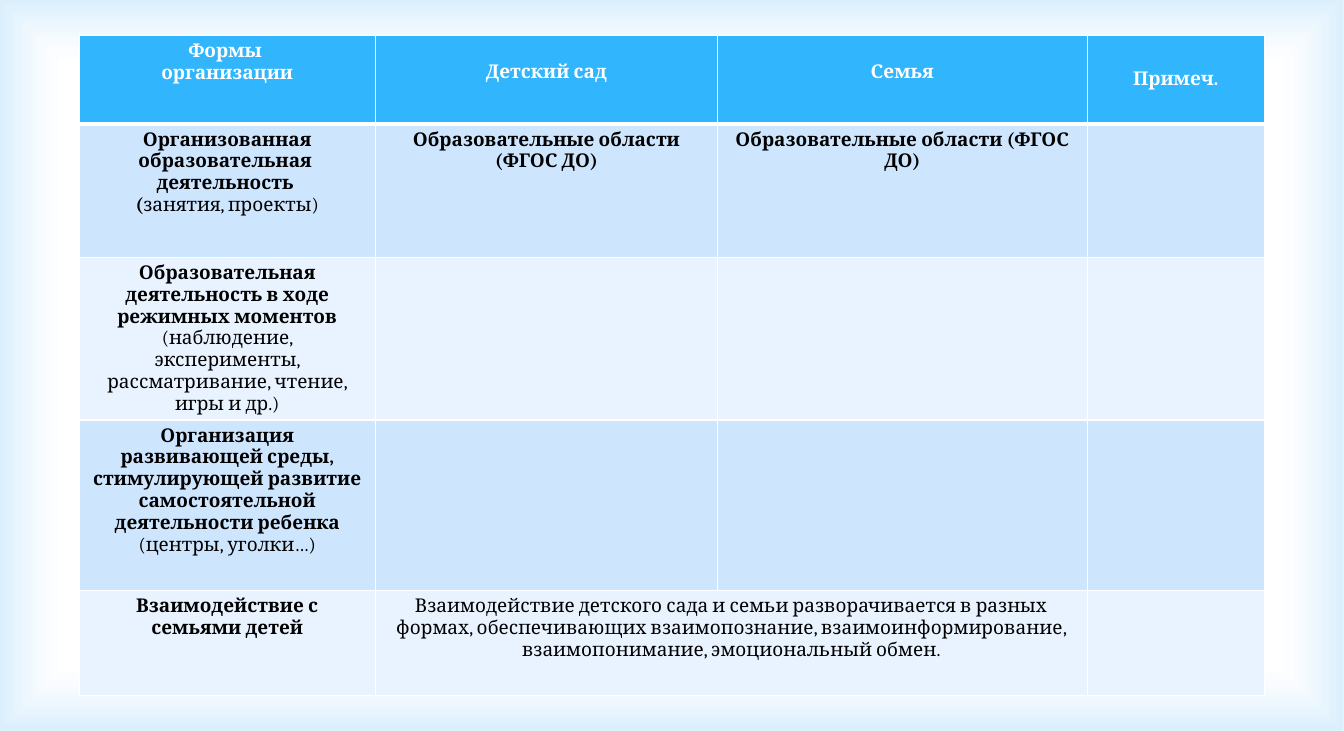
"""Build a slide with a table of forms of work in kindergarten and family."""
from lxml import etree
from pptx import Presentation, util as u
from pptx.dml.color import RGBColor
from pptx.enum import shapes, text
from pptx.oxml import parse_xml

NS = "http://schemas.openxmlformats.org/drawingml/2006/main"
WHITE, BLACK, HEADER = "FFFFFF", "000000", "31B6FD"
BANDS = ["CEE5FE", "E8F3FF"]


def add_text(p, content, color=BLACK, bold=False, size=14, font="Cambria"):
    p.alignment = text.PP_ALIGN.CENTER
    r = p.add_run()
    r.text = content
    r.font.name, r.font.size, r.font.bold = font, u.Pt(size), bold
    r.font.color.rgb = RGBColor.from_string(color)


def add_border(cell, index, side, width):
    ln = etree.Element(f"{{{NS}}}ln{side}", w=str(u.Pt(width)))
    fill = etree.SubElement(ln, f"{{{NS}}}solidFill")
    etree.SubElement(fill, f"{{{NS}}}srgbClr", val=WHITE)
    cell._tc.get_or_add_tcPr().insert(index, ln)


prs = Presentation()
prs.slide_width, prs.slide_height = u.Cm(35.01), u.Cm(19.05)
s = prs.slides.add_slide(prs.slide_layouts[6])

sp = s.shapes.add_shape(shapes.MSO_SHAPE.RECTANGLE, 0, 0, prs.slide_width, prs.slide_height)
sp.shadow.inherit = False
sp.line.fill.background()
sp.fill.background()
spPr = sp._element.spPr
spPr.replace(spPr.find(f"{{{NS}}}noFill"), parse_xml(
    f'<a:gradFill xmlns:a="{NS}" rotWithShape="1"><a:gsLst>'
    '<a:gs pos="83000"><a:srgbClr val="FFFFFF"><a:alpha val="11000"/></a:srgbClr></a:gs>'
    '<a:gs pos="100000"><a:srgbClr val="5BBAF6"><a:alpha val="23000"/></a:srgbClr></a:gs>'
    '</a:gsLst><a:path path="rect"><a:fillToRect l="50000" t="50000" r="50000" b="50000"/>'
    '</a:path></a:gradFill>'))

widths = [7.72, 8.91, 9.63, 4.61]
heights = [2.31, 3.48, 3.86, 4.45, 2.72]
areas = [[("Образовательные области (ФГОС ДО)", True)]]
rows = [
    [[[("Формы ", True)], [("организации", True)]],
     [[("Детский сад", True)]], [[("Семья", True)]], [[("Примеч.", True)]]],
    [[[("Организованная образовательная ", True)], [("деятельность ", True)],
      [("(", True), ("занятия, проекты)", False)]], areas, areas, []],
    [[[("Образовательная деятельность в ходе режимных моментов", True)],
      [("(наблюдение, эксперименты, рассматривание, чтение, игры и др.)", False)]], [], [], []],
    [[[("Организация развивающей среды,", True)],
      [("стимулирующей развитие самостоятельной деятельности ребенка", True)],
      [("(центры, уголки…)", False)]], [], [], []],
    [[[("Взаимодействие с семьями детей", True)]],
     [[("Взаимодействие детского сада и семьи разворачивается в разных формах, "
        "обеспечивающих взаимопознание, взаимоинформирование, взаимопонимание, "
        "эмоциональный обмен.", False)]], [], []],
]

table = s.shapes.add_table(len(rows), len(widths), u.Cm(2.06), u.Cm(0.92),
                           u.Cm(sum(widths)), u.Cm(sum(heights))).table
table.horz_banding = False
for column, width in zip(table.columns, widths):
    column.width = u.Cm(width)

for i, (row, height) in enumerate(zip(rows, heights)):
    table.rows[i].height = u.Cm(height)
    for j, paragraphs in enumerate(row):
        cell = table.cell(i, j)
        cell.margin_left = cell.margin_right = u.Cm(0.36)
        cell.margin_top = cell.margin_bottom = u.Cm(0.13)
        cell.fill.solid()
        cell.fill.fore_color.rgb = RGBColor.from_string(BANDS[(i - 1) % 2] if i else HEADER)
        sides = {"L": 1, "R": 1, "T": 3 if i == 1 else 1, "B": 1 if i else 3}
        for index, (side, width) in enumerate(sides.items()):
            add_border(cell, index, side, width)
        tf = cell.text_frame
        for k, runs in enumerate(paragraphs):
            p = tf.add_paragraph() if k else tf.paragraphs[0]
            for content, bold in runs:
                add_text(p, content, bold=bold, color=BLACK if i else WHITE)

for j in (1, 2):
    table.cell(0, j).margin_top = u.Cm(0.69)
note = table.cell(0, 3)
note.vertical_anchor = text.MSO_ANCHOR.MIDDLE
note.margin_left = note.margin_right = u.Cm(0.13)
note.margin_top = note.margin_bottom = 0
table.cell(4, 1).merge(table.cell(4, 2))

prs.save("out.pptx")
